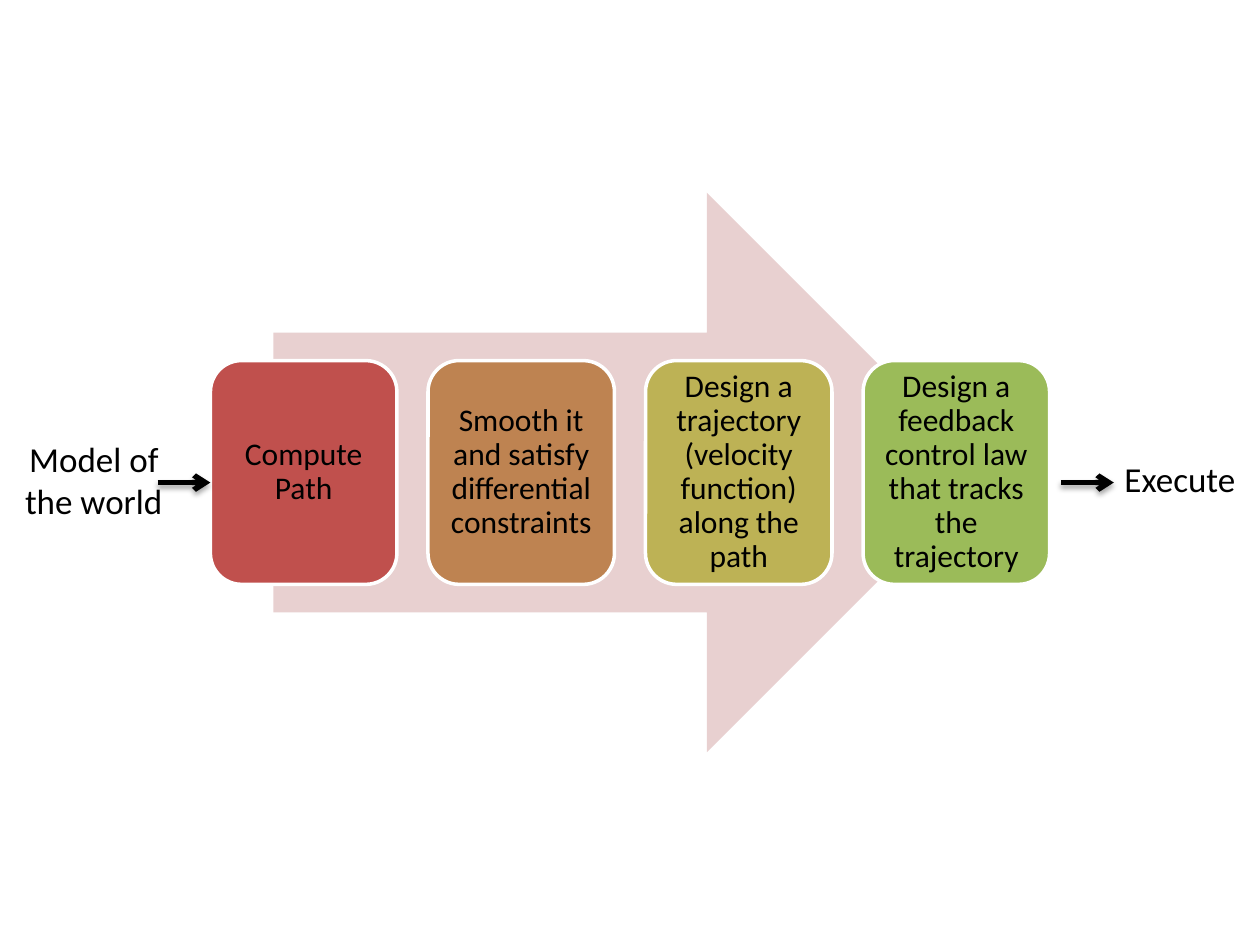
from dataclasses import dataclass

from lxml import etree
from pptx import Presentation
from pptx import util as u
from pptx.dml.color import RGBColor
from pptx.enum import shapes, text
from pptx.oxml import ns


@dataclass(frozen=True)
class Theme:
    """Colours, font and type sizes of the slide."""
    font: str = "Calibri"
    ink: str = "000000"
    edge: str = "FFFFFF"
    backdrop: str = "E8D0D0"
    label_size: int = 20
    step_size: int = 18


THEME = Theme()
STEPS = [
    ("Compute Path", "C0504D"),
    ("Smooth it and satisfy differential constraints", "BE8351"),
    ("Design a trajectory (velocity function) along the path", "BDB255"),
    ("Design a feedback control law that tracks the trajectory", "9BBB59"),
]


def assign(target, values):
    """Set each attribute of the target from a dict of values."""
    for name, value in values.items():
        setattr(target, name, value)


def write(frame, wording, size, frame_format, paragraph_format=None):
    """Fill a text frame with one centred paragraph."""
    assign(frame, {"word_wrap": True, **frame_format})
    paragraph = frame.paragraphs[0]
    assign(paragraph, {"alignment": text.PP_ALIGN.CENTER, **(paragraph_format or {})})
    run = paragraph.add_run()
    run.text = wording
    assign(run.font, {"name": THEME.font, "size": u.Pt(size)})
    run.font.color.rgb = RGBColor.from_string(THEME.ink)


def add_block(slide, preset, box, fill):
    """Add a flat filled shape without an outline."""
    block = slide.shapes.add_shape(preset, *map(u.Inches, box))
    block.shadow.inherit = False
    block.fill.solid()
    block.fill.fore_color.rgb = RGBColor.from_string(fill)
    block.line.fill.background()
    return block


def add_step(slide, box, wording, fill):
    """Add one rounded step card with its wording."""
    card = add_block(slide, shapes.MSO_SHAPE.ROUNDED_RECTANGLE, box, fill)
    card.line.color.rgb = RGBColor.from_string(THEME.edge)
    card.line.width = u.Pt(2)
    margins = {f"margin_{side}": u.Inches(0.07) for side in ("left", "top", "right", "bottom")}
    write(card.text_frame, wording, THEME.step_size,
          {"vertical_anchor": text.MSO_ANCHOR.MIDDLE, **margins},
          {"line_spacing": 0.9})


def add_process(slide, box, steps):
    """Place the large arrow and evenly spaced step cards over it."""
    left, top, width, height = box
    inset = 0.075 * width
    add_block(slide, shapes.MSO_SHAPE.RIGHT_ARROW,
              (left + inset, top, width - 2 * inset, height), THEME.backdrop)
    card_width, card_height = 1.48, 0.4 * height
    pitch = (width - card_width) / (len(steps) - 1)
    for index, (wording, fill) in enumerate(steps):
        card_box = (left + index * pitch, top + 0.3 * height, card_width, card_height)
        add_step(slide, card_box, wording, fill)


def add_label(slide, box, wording):
    """Add the input or output label."""
    label = slide.shapes.add_textbox(*map(u.Inches, box))
    write(label.text_frame, wording, THEME.label_size,
          {"auto_size": text.MSO_AUTO_SIZE.SHAPE_TO_FIT_TEXT})


def add_flow_arrow(slide, left, middle, length):
    """Add a horizontal arrow with a soft shadow below it."""
    ends = (left, middle, left + length, middle)
    arrow = slide.shapes.add_connector(shapes.MSO_CONNECTOR.STRAIGHT, *map(u.Inches, ends))
    arrow.line.color.rgb = RGBColor.from_string(THEME.ink)
    arrow.line.width = u.Pt(3)
    properties = arrow.line._get_or_add_ln().getparent()
    etree.SubElement(properties.find(ns.qn("a:ln")), ns.qn("a:tailEnd"), type="arrow")
    effects = etree.SubElement(properties, ns.qn("a:effectLst"))
    shadow = etree.SubElement(effects, ns.qn("a:outerShdw"), blurRad=str(u.Pt(3.1)),
                              dist=str(u.Pt(1.8)), dir="5400000", rotWithShape="0")
    colour = etree.SubElement(shadow, ns.qn("a:srgbClr"), val=THEME.ink)
    etree.SubElement(colour, ns.qn("a:alpha"), val="35000")


def main():
    """Build the planning pipeline slide."""
    deck = Presentation()
    assign(deck, {"slide_width": u.Inches(10), "slide_height": u.Inches(7.5)})
    slide = deck.slides.add_slide(deck.slide_layouts[6])
    add_label(slide, (0.08, 3.42, 1.33, 0.77), "Model of the world")
    add_process(slide, (1.67, 1.53, 6.66, 4.44), STEPS)
    add_label(slide, (8.7, 3.58, 1.33, 0.44), "Execute")
    for left in (1.25, 8.42):
        add_flow_arrow(slide, left, 3.83, 0.42)
    deck.save("out.pptx")


if __name__ == "__main__":
    main()
